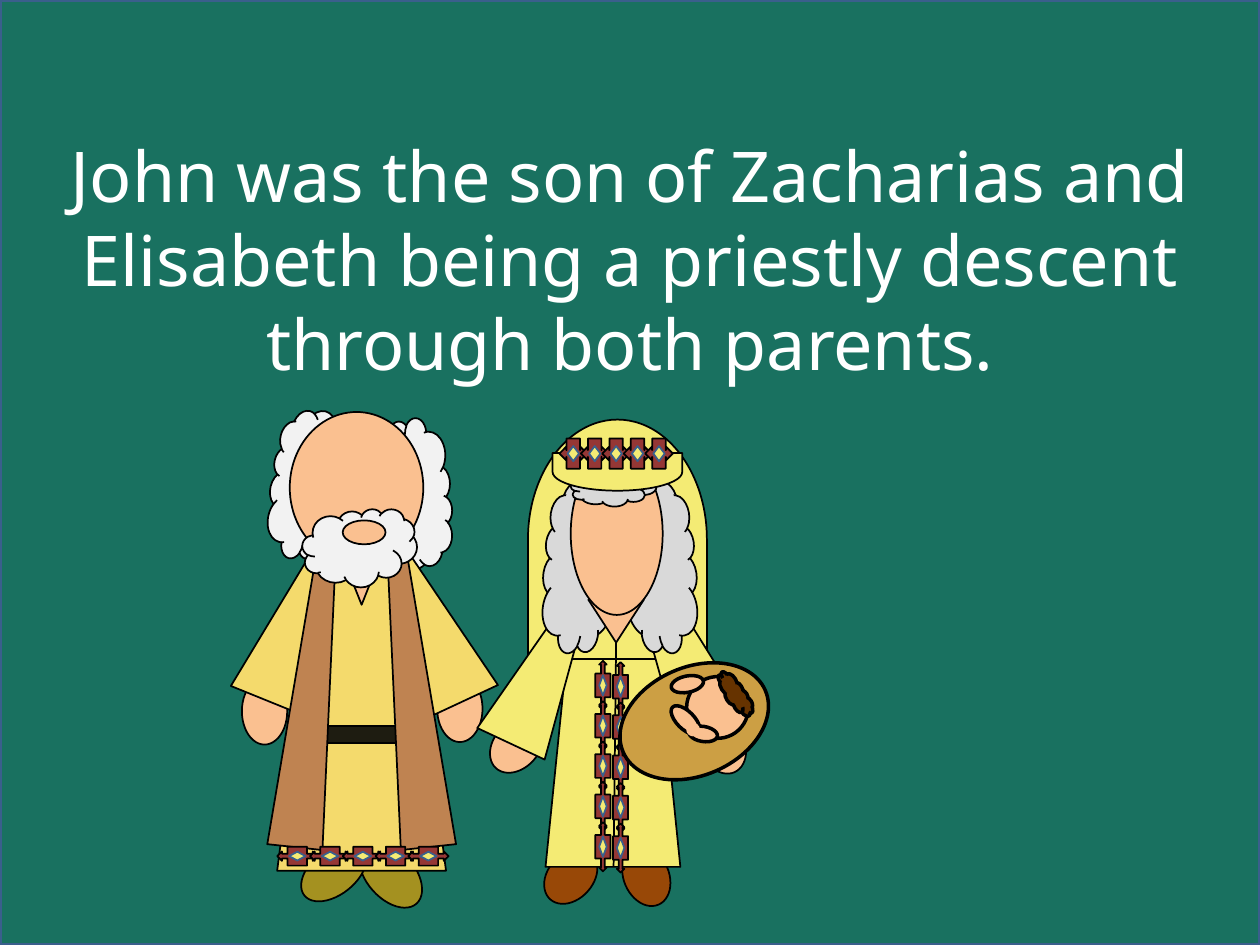
from pptx import Presentation
from pptx.dml.color import RGBColor
from pptx.enum import shapes, text
from pptx.oxml.ns import qn
from pptx.util import Inches, Pt
from lxml import etree

kind = shapes.MSO_SHAPE


class Theme:
    font = "Noto Sans"
    size = Pt(40)
    white = "FFFFFF"
    green = "197160"
    edge = "3A5F8C"
    black = "000000"
    skin = "FAC090"
    olive = "A49120"
    hair = "F2F2F2"
    gray = "D9D9D9"
    robe = "F4DA6C"
    belt = "1E1C11"
    stole = "BF8351"
    dress = "F4EB74"
    shoe = "984807"
    bead = "953735"
    wrap = "CC9F44"
    brown = "663300"
    thin = Pt(1)
    thick = Pt(2)


def draw(host, form, box, fill, turn=0, adj=None, flip=False,
         edge=Theme.black, width=Theme.thin):
    """Add one filled preset shape; box is left, top, width, height in inches."""
    part = host.add_shape(form, *map(Inches, box))
    part.shadow.inherit = False
    part.fill.solid()
    part.fill.fore_color.rgb = RGBColor.from_string(fill)
    part.line.color.rgb = RGBColor.from_string(edge)
    part.line.width = width
    part.rotation = turn
    if adj is not None:
        part.adjustments[0] = adj
    if flip:
        part._element.spPr.find(qn("a:xfrm")).set("flipH", "1")


def trim(host, start, step, size, gem, turn=0):
    """Add a row of five beads, each a callout with a diamond at its centre."""
    for i in range(5):
        x, y = start[0] + i * step[0], start[1] + i * step[1]
        draw(host, kind.LEFT_RIGHT_ARROW_CALLOUT, (x, y, *size), Theme.bead, turn)
        inset = (x + (size[0] - gem[0]) / 2, y + (size[1] - gem[1]) / 2)
        draw(host, kind.DIAMOND, (*inset, *gem), Theme.dress, turn, edge=Theme.edge)


deck = Presentation()
deck.slide_width, deck.slide_height = Inches(10), Inches(7.5)
slide = deck.slides.add_slide(deck.slide_layouts[6])
draw(slide.shapes, kind.RECTANGLE, (0, 0, 10, 7.5), Theme.green,
     edge=Theme.edge, width=Theme.thick)

# Heading
title = slide.shapes.add_textbox(Inches(0), Inches(0.33), Inches(10), Inches(3.47))
frame = title.text_frame
frame.word_wrap = True
frame.margin_top = Inches(0.72)
para = frame.paragraphs[0]
para.alignment = text.PP_ALIGN.CENTER
run = para.add_run()
run.text = ("John was the son of Zacharias and Elisabeth being "
            "a priestly descent through both parents.")
run.font.name = Theme.font
run.font.size = Theme.size
run.font.color.rgb = RGBColor.from_string(Theme.white)

# Zacharias
man = slide.shapes.add_group_shape().shapes
for row in [
    (kind.OVAL, (2.91, 6.63, 0.38, 0.62), Theme.olive, 318.5),
    (kind.OVAL, (2.47, 6.62, 0.36, 0.6), Theme.olive, 51.4),
    (kind.CLOUD, (2.68, 3.61, 1.2, 0.62), Theme.hair, 90),
    (kind.CLOUD, (1.85, 3.54, 1.2, 0.62), Theme.hair, 283.6),
    (kind.OVAL, (3.47, 5.36, 0.36, 0.53), Theme.skin),
    (kind.OVAL, (1.92, 5.38, 0.36, 0.53), Theme.skin),
    (kind.TRAPEZOID, (3.08, 4.3, 0.62, 1.33), Theme.robe, 335, 0.34),
    (kind.TRAPEZOID, (2.06, 4.28, 0.62, 1.33), Theme.robe, 22.1, 0.34),
    (kind.TRAPEZOID, (2.2, 4.32, 1.34, 2.59), Theme.robe),
    (kind.ISOSCELES_TRIANGLE, (2.68, 4.32, 0.38, 0.48), Theme.skin, 180),
    (kind.RECTANGLE, (2.4, 5.76, 0.96, 0.14), Theme.belt),
    (kind.TRAPEZOID, (2.25, 4.29, 0.44, 2.44), Theme.stole, 6.1, 0.34),
    (kind.TRAPEZOID, (3.05, 4.28, 0.44, 2.45), Theme.stole, 353.9, 0.34),
    (kind.OVAL, (2.3, 3.27, 1.06, 1.2), Theme.skin),
    (kind.CLOUD, (2.4, 4.04, 0.91, 0.62), Theme.hair),
    (kind.OVAL, (2.72, 4.13, 0.34, 0.19), Theme.skin),
]:
    draw(man, *row)
trim(man, (2.2, 6.72), (0.26, 0), (0.32, 0.15), (0.13, 0.07))

# Elisabeth
wife = slide.shapes.add_group_shape().shapes
for row in [
    (kind.OVAL, (4.95, 6.71, 0.36, 0.49), Theme.shoe, 336.8),
    (kind.OVAL, (4.35, 6.71, 0.36, 0.49), Theme.shoe, 41.7),
    (kind.OVAL, (3.92, 5.67, 0.36, 0.49), Theme.skin, 41.7),
    (kind.OVAL, (5.55, 5.66, 0.36, 0.49), Theme.skin, 335.9),
    (kind.TRAPEZOID, (4.33, 4.97, 1.07, 1.91), Theme.dress, 0, 0.18),
    (kind.FLOWCHART_DELAY, (3.95, 3.57, 1.9, 1.42), Theme.dress, 270),
    (kind.TRAPEZOID, (3.97, 4.96, 0.59, 0.99), Theme.dress, 25.1, 0.29),
    (kind.TRAPEZOID, (5.18, 4.86, 0.62, 1.08), Theme.dress, 336.2),
    (kind.CLOUD, (4.52, 4.18, 1.39, 0.64), Theme.gray, 80.8, None, True),
    (kind.CLOUD, (3.93, 4.18, 1.39, 0.64), Theme.gray, 279.2),
    (kind.ISOSCELES_TRIANGLE, (4.67, 4.76, 0.44, 0.34), Theme.skin, 180),
    (kind.OVAL, (4.53, 3.59, 0.73, 1.29), Theme.skin),
    (kind.CLOUD, (4.53, 3.72, 0.68, 0.3), Theme.gray),
    (kind.FLOWCHART_DELAY, (4.75, 3.23, 0.3, 1.03), Theme.dress, 90),
]:
    draw(wife, *row)
seam = wife.add_connector(shapes.MSO_CONNECTOR.STRAIGHT, Inches(4.89), Inches(5.1),
                          Inches(4.87), Inches(6.88))
seam.line.color.rgb = RGBColor.from_string(Theme.black)
seam.line.width = Theme.thin
etree.SubElement(seam._element.spPr, qn("a:effectLst"))
trim(wife, (4.44, 3.48), (0.17, 0), (0.22, 0.24), (0.09, 0.12))
for start in [(4.73, 5.39), (4.59, 5.38)]:
    trim(wife, start, (0, 0.32), (0.39, 0.12), (0.16, 0.06), 90)

# Baby John
baby = slide.shapes.add_group_shape().shapes
for form, box, fill, turn, edge in [
    (kind.OVAL, (5.08, 5.11, 0.86, 1.23), Theme.wrap, 66.5, Theme.black),
    (kind.OVAL, (5.45, 5.37, 0.49, 0.49), Theme.skin, 99.2, Theme.black),
    (kind.CLOUD, (5.63, 5.43, 0.41, 0.16), Theme.brown, 58.1, Theme.black),
    (kind.OVAL, (5.37, 5.57, 0.14, 0.29), Theme.skin, 135, Theme.black),
    (kind.OVAL, (5.39, 5.3, 0.13, 0.26), Theme.skin, 78.7, Theme.black),
    (kind.OVAL, (5.52, 5.71, 0.12, 0.23), Theme.skin, 99.2, Theme.black),
    (kind.OVAL, (5.46, 5.75, 0.08, 0.08), Theme.skin, 99.2, Theme.skin),
]:
    draw(baby, form, box, fill, turn, edge=edge, width=Theme.thick)

deck.save("out.pptx")
